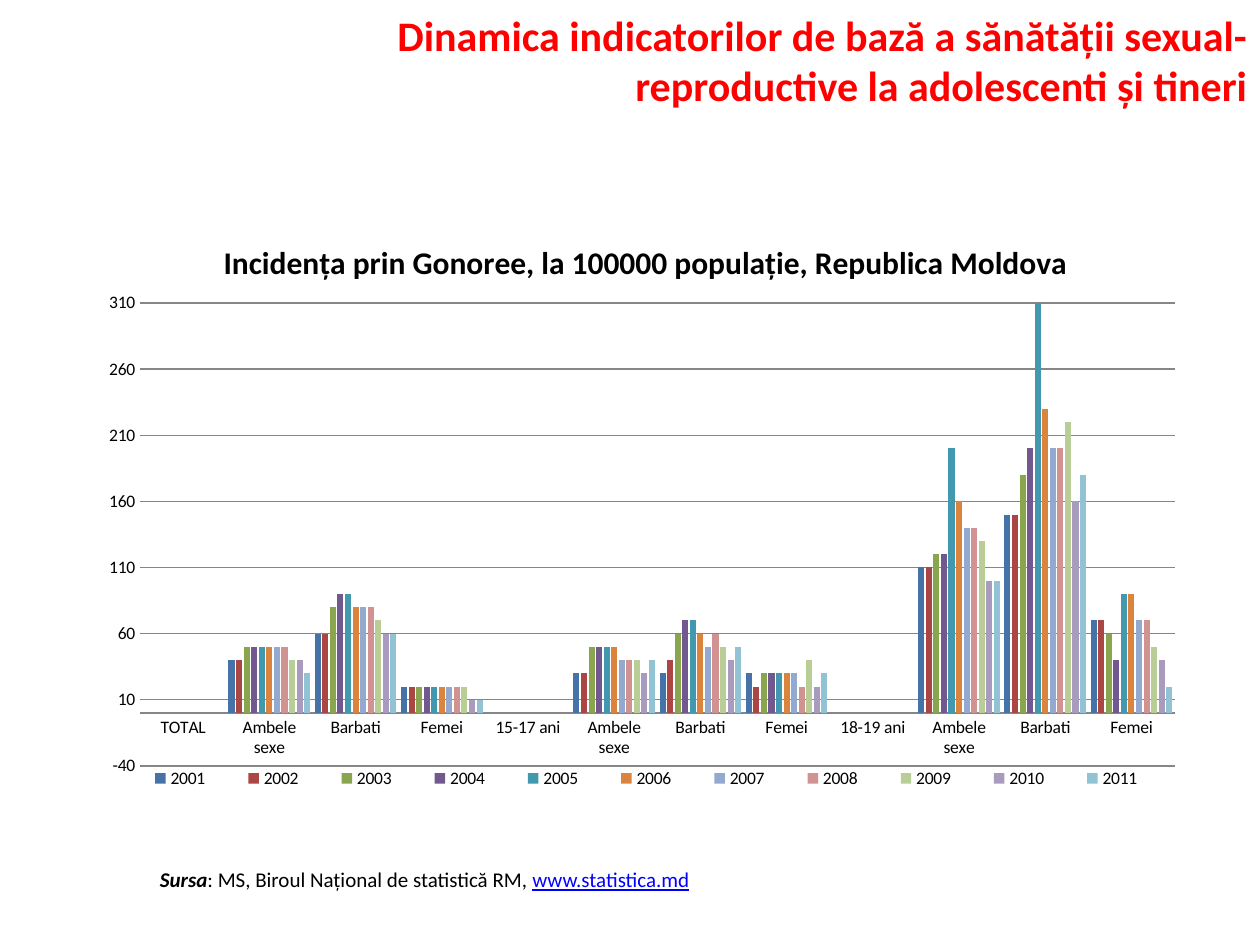
from lxml.etree import SubElement
from pptx import Presentation
from pptx.chart.data import CategoryChartData
from pptx.dml.color import RGBColor
from pptx.enum.chart import XL_CHART_TYPE, XL_LEGEND_POSITION, XL_TICK_MARK
from pptx.enum.text import MSO_ANCHOR, PP_ALIGN
from pptx.oxml.ns import qn
from pptx.util import Inches, Pt


def color(hex_code):
    return RGBColor.from_string(hex_code)


def place(part, index, **shares):
    """Fix a chart part at shares of the chart's size; index is the layout's place among its children."""
    layout = part.find(qn("c:layout"))
    if layout is not None:
        part.remove(layout)
    layout = SubElement(part, qn("c:layout"))
    part.insert(index, layout)
    manual = SubElement(layout, qn("c:manualLayout"))
    if part.tag == qn("c:plotArea"):
        SubElement(manual, qn("c:layoutTarget")).set("val", "inner")
    for side in ("x", "y"):
        SubElement(manual, qn(f"c:{side}Mode")).set("val", "edge")
    for side, share in shares.items():
        SubElement(manual, qn(f"c:{side}")).set("val", str(share))


prs = Presentation()
prs.slide_width, prs.slide_height = Inches(10), Inches(7.5)
slide = prs.slides.add_slide(prs.slide_layouts[5])

heading = slide.shapes.title
heading.left, heading.top = Inches(1.42), 0
heading.width, heading.height = prs.slide_width - heading.left, Inches(0.95)
heading.text_frame.text = ("Dinamica indicatorilor de bază a sănătății "
                           "sexual-reproductive la adolescenti și tineri")
heading.text_frame.vertical_anchor = MSO_ANCHOR.MIDDLE
line = heading.text_frame.paragraphs[0]
line.alignment = PP_ALIGN.RIGHT
line.font.name, line.font.size, line.font.bold = "Calibri", Pt(24), True
line.font.color.rgb = color("FF0000")

# Each age group is a heading category without bars, then both sexes, men, women.
age_groups = ["TOTAL", "15-17 ani", "18-19 ani"]
sexes = ["Ambele sexe", "Barbati", "Femei"]
incidence = {
    "2001": ("4572A7", [40, 60, 20], [30, 30, 30], [110, 150, 70]),
    "2002": ("AA4643", [40, 60, 20], [30, 40, 20], [110, 150, 70]),
    "2003": ("89A54E", [50, 80, 20], [50, 60, 30], [120, 180, 60]),
    "2004": ("71588F", [50, 90, 20], [50, 70, 30], [120, 200, 40]),
    "2005": ("4198AF", [50, 90, 20], [50, 70, 30], [200, 310, 90]),
    "2006": ("DB843D", [50, 80, 20], [50, 60, 30], [160, 230, 90]),
    "2007": ("93A9CF", [50, 80, 20], [40, 50, 30], [140, 200, 70]),
    "2008": ("D19392", [50, 80, 20], [40, 60, 20], [140, 200, 70]),
    "2009": ("B9CD96", [40, 70, 20], [40, 50, 40], [130, 220, 50]),
    "2010": ("A99BBD", [40, 60, 10], [30, 40, 20], [100, 160, 40]),
    "2011": ("91C3D5", [30, 60, 10], [40, 50, 30], [100, 180, 20]),
}
chart_data = CategoryChartData()
chart_data.categories = [label for age in age_groups for label in [age, *sexes]]
for year, (_, *groups) in incidence.items():
    chart_data.add_series(year, [rate for group in groups for rate in [None, *group]])

chart = slide.shapes.add_chart(
    XL_CHART_TYPE.COLUMN_CLUSTERED, Inches(0.67), Inches(1.67),
    Inches(8.83), Inches(4.9), chart_data).chart
chart.font.name, chart.font.size = "Calibri", Pt(10)
chart.font.color.rgb = color("000000")

chart.has_title = True
chart.chart_title.text_frame.text = "Incidența prin Gonoree, la 100000 populație, Republica Moldova"
caption = chart.chart_title.text_frame.paragraphs[0].font
caption.name, caption.size, caption.bold = "Calibri", Pt(18), True
caption.color.rgb = color("000000")
place(chart.chart_title._element, 1, x=0.12, y=0.04)

chart.has_legend = True
chart.legend.position = XL_LEGEND_POSITION.BOTTOM
chart.legend.include_in_layout = False
place(chart.legend._element, 1, x=0.03, y=0.9, w=0.95, h=0.04)

bars = chart.plots[0]
bars.gap_width, bars.overlap, bars.vary_by_categories = 75, -25, False
for series, (fill, *_) in zip(bars.series, incidence.values()):
    series.format.fill.solid()
    series.format.fill.fore_color.rgb = color(fill)
place(chart._chartSpace.chart.plotArea, 0, x=0.05, y=0.15, w=0.93, h=0.75)

rates, groups_axis = chart.value_axis, chart.category_axis
rates.minimum_scale, rates.maximum_scale, rates.major_unit = -40, 310, 50
rates.has_major_gridlines = True
rates.major_gridlines.format.line.color.rgb = color("868686")
rates.format.line.fill.background()
groups_axis.format.line.color.rgb = color("868686")
for axis in (rates, groups_axis):
    axis.major_tick_mark = axis.minor_tick_mark = XL_TICK_MARK.NONE

source = slide.shapes.add_textbox(Inches(1.17), Inches(6.83), Inches(6.25), Inches(0.3))
source.text_frame.word_wrap = True
line = source.text_frame.paragraphs[0]
line.font.name, line.font.size = "Calibri", Pt(12)
for words, ink in [("Sursa", "000000"),
                   (": MS, Biroul Național de statistică RM, ", "000000"),
                   ("www.statistica.md", "0000FF")]:
    run = line.add_run()
    run.text = words
    run.font.color.rgb = color(ink)
label, _, site = line.runs
label.font.bold = label.font.italic = True
site.font.underline = True

prs.save("out.pptx")
